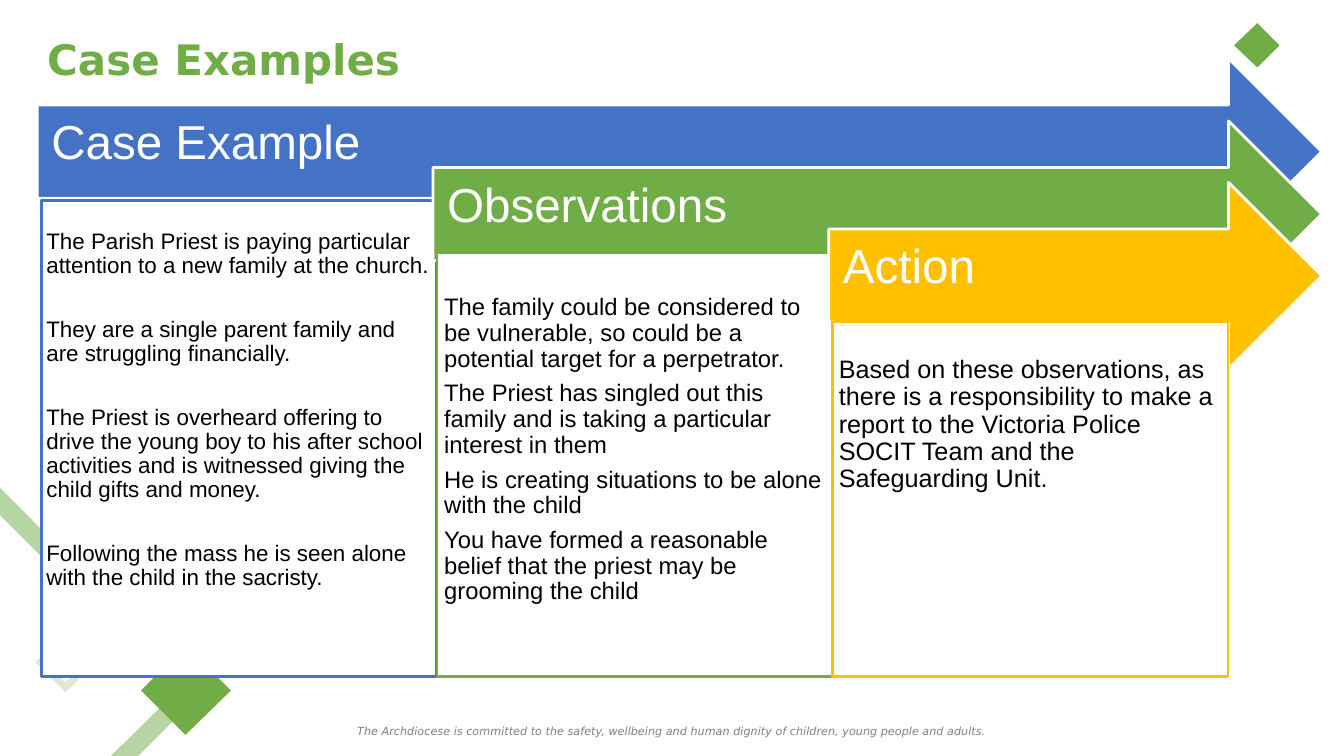
"""Build the Case Examples slide with three staggered arrows and their panels."""
from lxml.etree import SubElement
from pptx import Presentation
from pptx.dml.color import RGBColor
from pptx.enum.shapes import MSO_SHAPE
from pptx.enum.text import MSO_ANCHOR as ANCHOR, PP_ALIGN as ALIGN
from pptx.oxml.ns import qn
from pptx.util import Inches, Pt


def paint(sp, fill, line=None, alpha=None):
    sp.shadow.inherit = False
    sp.fill.solid()
    sp.fill.fore_color.rgb = RGBColor.from_string(fill)
    if alpha:
        color = sp.fill._xPr.find(qn("a:solidFill"))[0]
        SubElement(color, qn("a:alpha")).set("val", str(alpha * 1000))
    if line:
        sp.line.color.rgb = RGBColor.from_string(line)
        sp.line.width = Pt(2)
    else:
        sp.line.fill.background()


def write(sp, text, size, color, font="Arial", bold=False, italic=False,
          align=ALIGN.LEFT, anchor=ANCHOR.TOP, insets=(0.1, 0.05, 0.1, 0.05),
          spacing=None, gap=0):
    tf = sp.text_frame
    tf.word_wrap = True
    tf.vertical_anchor = anchor
    tf.margin_left, tf.margin_top, tf.margin_right, tf.margin_bottom = map(Inches, insets)
    for i, line in enumerate(text.split("\n")):
        p = tf.add_paragraph() if i else tf.paragraphs[0]
        p.alignment = align
        p.line_spacing = spacing
        p.space_before = Pt(gap if i else 0)
        r = p.add_run()
        r.text = line
        r.font.name, r.font.size = font, Pt(size)
        r.font.bold, r.font.italic = bold, italic
        r.font.color.rgb = RGBColor.from_string(color)


LEAF = "70AD46"
WHITE = "FFFFFF"

prs = Presentation()
prs.slide_width, prs.slide_height = Inches(13.33), Inches(7.5)
s = prs.slides.add_slide(prs.slide_layouts[6])

footer = s.shapes.add_textbox(Inches(0), Inches(7.14), Inches(13.33), Inches(0.24))
write(footer, "The Archdiocese is committed to the safety, wellbeing and human dignity "
      "of children, young people and adults.", 8, "808080", font="DejaVu Sans",
      italic=True, align=ALIGN.CENTER)

ring = [[(0.65, 6.36), (0.86, 6.57), (0.65, 6.77), (0.44, 6.57)],
        [(0.65, 6.27), (0.35, 6.57), (0.65, 6.87), (0.95, 6.57)]]
lower_diamond = [[(1.84, 6.4), (1.4, 6.85), (1.84, 7.29), (2.29, 6.85)]]
upper_diamond = [[(12.47, 0.23), (12.24, 0.45), (12.47, 0.67), (12.69, 0.45)]]
chevron = [[(0, 4.84), (0, 5.11), (1.75, 6.86), (1.1, 7.5), (1.37, 7.5), (2.01, 6.86)]]
for outline, alpha in ((ring, 25), (lower_diamond, None), (upper_diamond, None), (chevron, 50)):
    contours = [[(Inches(x), Inches(y)) for x, y in contour] for contour in outline]
    builder = s.shapes.build_freeform(*contours[0][0])
    builder.add_line_segments(contours[0][1:], close=True)
    for contour in contours[1:]:
        builder.move_to(*contour[0])
        builder.add_line_segments(contour[1:], close=True)
    paint(builder.convert_to_shape(), LEAF, alpha=alpha)

title = s.shapes.add_textbox(Inches(0.37), Inches(0.07), Inches(12), Inches(1.02))
write(title, "Case Examples", 30, LEAF, font="DejaVu Sans", bold=True, anchor=ANCHOR.MIDDLE)

stages = [
    ("Case Example", "4472C4", 0.58, 1.99, 16, 28.4, 0.05, 0.29,
     "The Parish Priest is paying particular attention to a new family at the church.\n"
     "They are a single parent family and are struggling financially.\n"
     "The Priest is overheard offering to drive the young boy to his after school "
     "activities and is witnessed giving the child gifts and money.\n"
     "Following the mass he is seen alone with the child in the sacristy."),
    ("Observations", "70AD47", 1.2, 2.51, 17, 6.4, 0.07, 0.42,
     "The family could be considered to be vulnerable, so could be a potential target "
     "for a perpetrator.\n"
     "The Priest has singled out this family and is taking a particular interest in them\n"
     "He is creating situations to be alone with the child\n"
     "You have formed a reasonable belief that the priest may be grooming the child"),
    ("Action", "FFC000", 1.81, 3.19, 18, 0, 0.06, 0.35,
     "Based on these observations, as there is a responsibility to make a report to the "
     "Victoria Police SOCIT Team and the Safeguarding Unit."),
]
COLUMN_STEP = 3.925
ARROW_TIP = 13.11
PANEL_BOTTOM = 6.71
for i, (heading, color, arrow_top, panel_top, size, gap, inset, top_inset, body) in enumerate(stages):
    left = 0.37 + COLUMN_STEP * i
    arrow = s.shapes.add_shape(MSO_SHAPE.RIGHT_ARROW, Inches(left), Inches(arrow_top),
                               Inches(ARROW_TIP - left), Inches(1.85))
    paint(arrow, color, WHITE)
    write(arrow, heading, 34, WHITE, anchor=ANCHOR.MIDDLE,
          insets=(0.14, 0.14, 0.28, 0.29), spacing=0.9)
    panel = s.shapes.add_shape(MSO_SHAPE.RECTANGLE, Inches(left + 0.04), Inches(panel_top),
                               Inches(3.92), Inches(PANEL_BOTTOM - panel_top))
    paint(panel, WHITE, color)
    write(panel, body, size, "000000", insets=(inset, top_inset, inset, inset),
          spacing=0.9, gap=gap)

prs.save("out.pptx")
